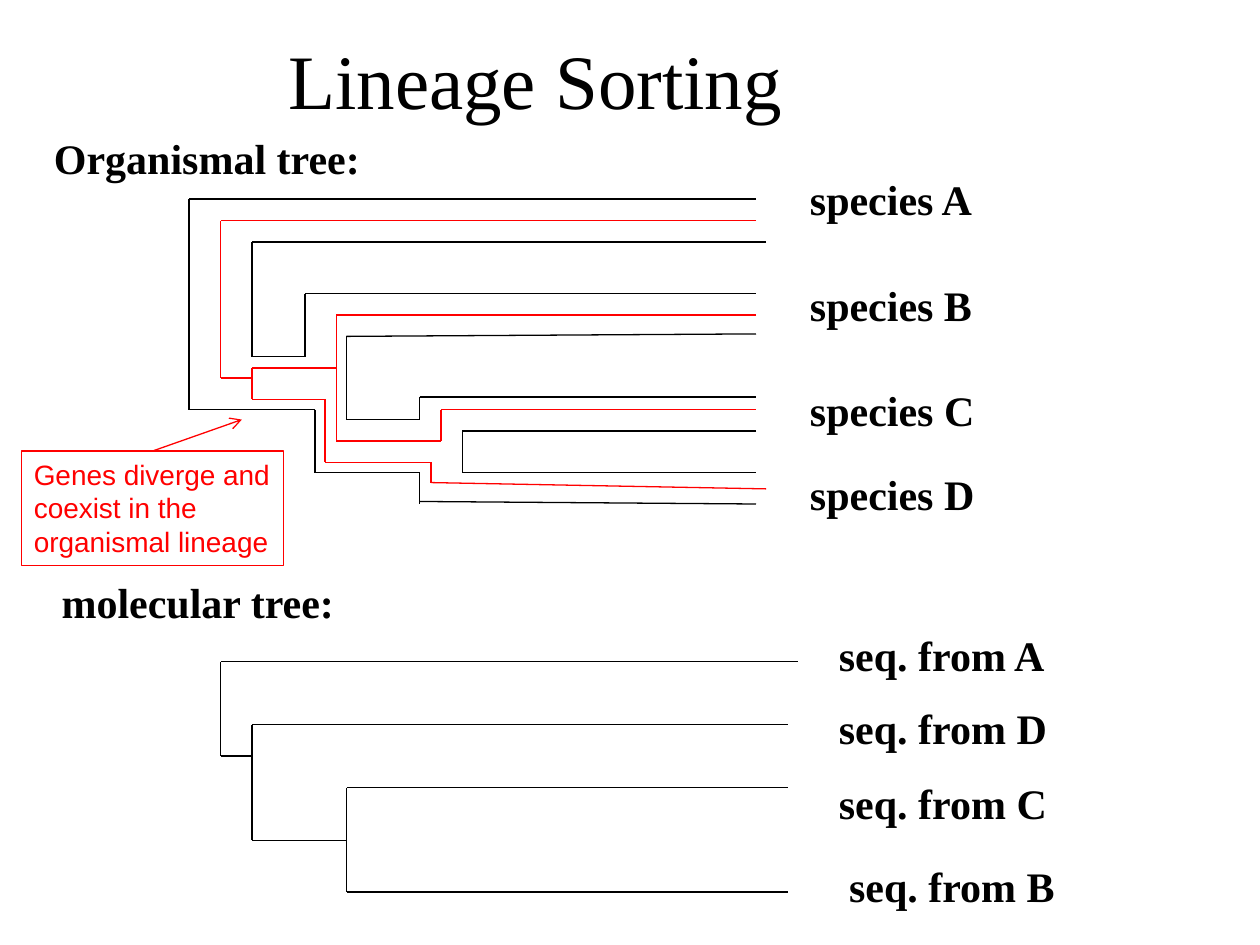
"""Build the Lineage Sorting slide with its organismal and molecular trees."""
from itertools import pairwise
from typing import NamedTuple

from lxml.etree import SubElement
from pptx import Presentation
from pptx.dml.color import RGBColor
from pptx.enum.shapes import MSO_CONNECTOR, MSO_SHAPE
from pptx.enum.text import MSO_ANCHOR, MSO_AUTO_SIZE, PP_ALIGN
from pptx.oxml.ns import qn
from pptx.util import Inches, Pt

BLACK, RED = "000000", "FF0000"
SERIF, SANS = "Times New Roman", "Arial"


class Label(NamedTuple):
    text: str
    left: float
    top: float
    width: float


class Branch(NamedTuple):
    points: list[tuple[float, float]]
    color: str = BLACK
    arrow: bool = False


ORGANISMAL_LABELS = [
    Label("Organismal tree:", 0.33, 1, 2.72),
    Label("species A", 6.33, 1.33, 1.53),
    Label("species B", 6.33, 2.17, 1.53),
    Label("species C", 6.33, 3, 1.55),
    Label("species D", 6.33, 3.67, 1.55),
]
MOLECULAR_LABELS = [
    Label("molecular tree:", 0.39, 4.53, 2.39),
    Label("seq. from A", 6.56, 4.95, 1.86),
    Label("seq. from D", 6.56, 5.53, 1.87),
    Label("seq. from C", 6.56, 6.12, 1.87),
    Label("seq. from B", 6.64, 6.78, 1.85),
]
ORGANISMAL_BRANCHES = [
    Branch([(6, 1.58), (1.5, 1.58), (1.5, 3.25), (2.5, 3.25), (2.5, 3.75),
            (3.33, 3.75), (3.33, 4)]),
    Branch([(3.33, 3.98), (6, 4)]),
    Branch([(6.08, 1.92), (2, 1.92), (2, 2.83), (2.42, 2.83), (2.42, 2.33), (6, 2.33)]),
    Branch([(6, 2.65), (2.75, 2.67), (2.75, 3.33), (3.33, 3.33), (3.33, 3.15), (6, 3.15)]),
    Branch([(6, 3.42), (3.67, 3.42), (3.67, 3.75), (6, 3.75)]),
]
GENE_BRANCHES = [
    Branch([(6, 1.75), (1.75, 1.75), (1.75, 3), (2, 3)], RED),
    Branch([(2.67, 2.92), (2, 2.92), (2, 3.17), (2.58, 3.17), (2.58, 3.67),
            (3.42, 3.67), (3.42, 3.83), (6.08, 3.88)], RED),
    Branch([(6, 2.5), (2.67, 2.5), (2.67, 3.5), (3.5, 3.5), (3.5, 3.25), (6, 3.25)], RED),
]
MOLECULAR_BRANCHES = [
    Branch([(6.33, 5.25), (1.75, 5.25), (1.75, 6), (2, 6)]),
    Branch([(6.25, 5.75), (2, 5.75), (2, 6.67), (2.75, 6.67)]),
    Branch([(6.25, 6.25), (2.75, 6.25), (2.75, 7.08), (6.25, 7.08)]),
]
CALLOUT_ARROW = Branch([(1.21, 3.58), (1.92, 3.33)], RED, arrow=True)


def rgb(color: str) -> RGBColor:
    return RGBColor.from_string(color)


def place(shape, left: float, top: float, width: float, height: float) -> None:
    shape.left, shape.top = Inches(left), Inches(top)
    shape.width, shape.height = Inches(width), Inches(height)


def style_paragraph(paragraph, font: str, size: float, color: str, bold: bool = False,
                    alignment: PP_ALIGN = PP_ALIGN.LEFT) -> None:
    paragraph.alignment = alignment
    paragraph.font.name, paragraph.font.size = font, Pt(size)
    paragraph.font.bold = bold
    paragraph.font.color.rgb = rgb(color)


def style_line(line, color: str) -> None:
    line.color.rgb = rgb(color)
    line.width = Pt(0.75)


def draw_branch(shapes, branch: Branch) -> None:
    for (start_x, start_y), (end_x, end_y) in pairwise(branch.points):
        connector = shapes.add_connector(
            MSO_CONNECTOR.STRAIGHT, Inches(start_x), Inches(start_y),
            Inches(end_x), Inches(end_y))
        style_line(connector.line, branch.color)
        properties = connector._element.spPr
        if branch.arrow:
            SubElement(properties.find(qn("a:ln")), qn("a:tailEnd"), type="arrow")
        SubElement(properties, qn("a:effectLst"))


def draw_label(shapes, label: Label) -> None:
    box = shapes.add_textbox(Inches(label.left), Inches(label.top),
                             Inches(label.width), Inches(0.5))
    frame = box.text_frame
    frame.word_wrap = False
    frame.auto_size = MSO_AUTO_SIZE.SHAPE_TO_FIT_TEXT
    frame.text = label.text
    style_paragraph(frame.paragraphs[0], SERIF, 24, BLACK, bold=True)


def draw_tree(shapes, branches: list[Branch], labels: list[Label]) -> None:
    for branch in branches:
        draw_branch(shapes, branch)
    for label in labels:
        draw_label(shapes, label)


def draw_title(page) -> None:
    title = page.shapes.title
    place(title, 0, 0, 8.5, 1.25)
    frame = title.text_frame
    frame.text = "Lineage Sorting"
    frame.vertical_anchor = MSO_ANCHOR.MIDDLE
    style_paragraph(frame.paragraphs[0], SERIF, 44, BLACK, alignment=PP_ALIGN.CENTER)


def draw_callout(shapes) -> None:
    box = shapes.add_shape(MSO_SHAPE.RECTANGLE, Inches(0.17), Inches(3.58),
                           Inches(2.08), Inches(0.91))
    box.shadow.inherit = False
    box.fill.background()
    style_line(box.line, RED)
    frame = box.text_frame
    frame.word_wrap = True
    frame.vertical_anchor = MSO_ANCHOR.TOP
    frame.auto_size = MSO_AUTO_SIZE.SHAPE_TO_FIT_TEXT
    paragraph = frame.paragraphs[0]
    paragraph.text = "Genes diverge and coexist in the \vorganismal lineage"
    style_paragraph(paragraph, SANS, 16, RED)
    draw_branch(shapes, CALLOUT_ARROW)


def main() -> None:
    deck = Presentation()
    deck.slide_width, deck.slide_height = Inches(10), Inches(7.5)
    page = deck.slides.add_slide(deck.slide_layouts[5])
    draw_title(page)
    draw_tree(page.shapes, ORGANISMAL_BRANCHES + GENE_BRANCHES, ORGANISMAL_LABELS)
    draw_tree(page.shapes.add_group_shape().shapes, MOLECULAR_BRANCHES, MOLECULAR_LABELS)
    draw_callout(page.shapes)
    deck.save("out.pptx")


if __name__ == "__main__":
    main()
